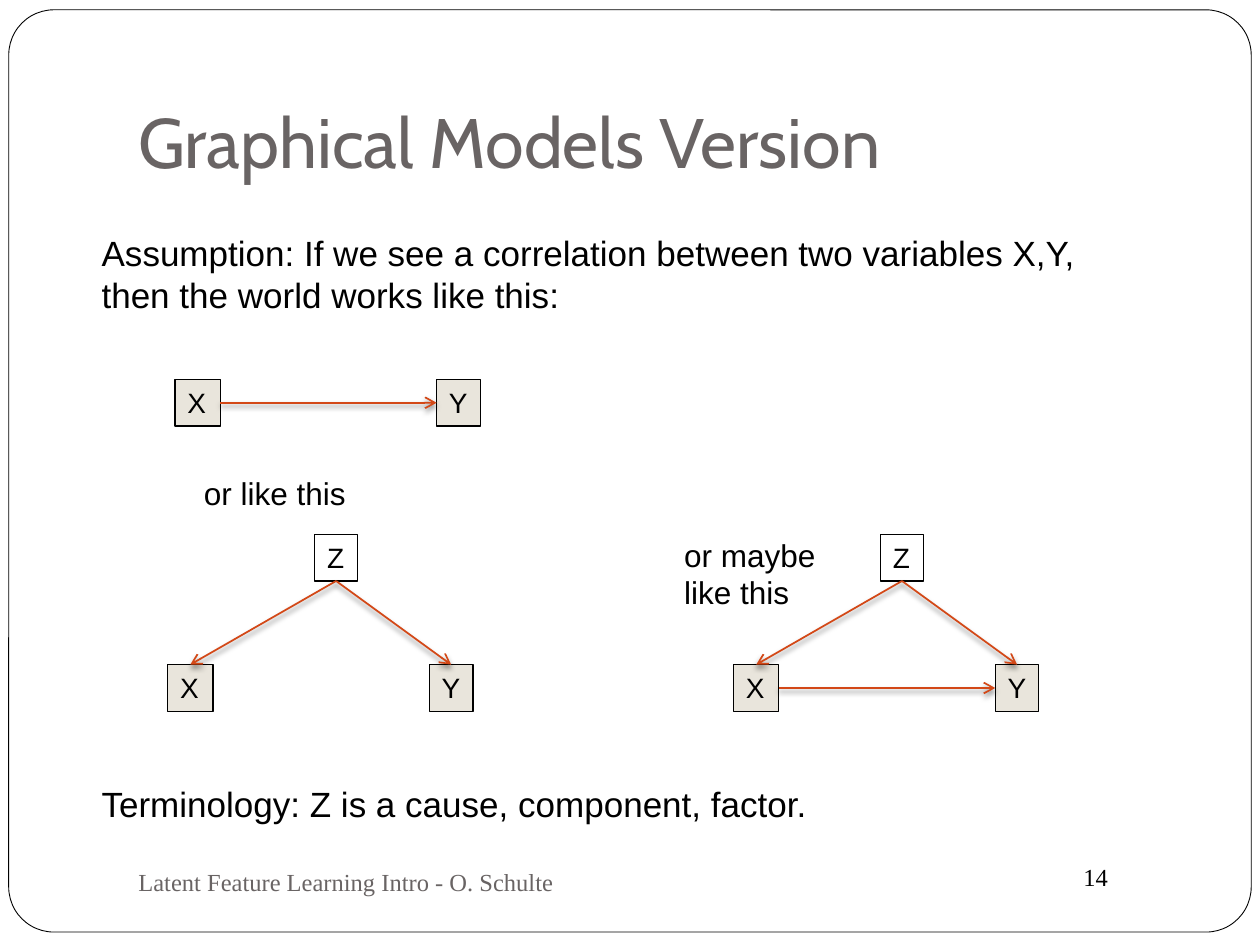
"""Build the slide 'Graphical Models Version' with its three small causal graphs."""
from lxml import etree
from pptx import Presentation
from pptx.dml.color import RGBColor
from pptx.enum.shapes import MSO_CONNECTOR, MSO_SHAPE
from pptx.enum.text import MSO_ANCHOR, MSO_AUTO_SIZE, PP_ALIGN
from pptx.oxml import parse_xml
from pptx.oxml.ns import nsdecls, qn
from pptx.util import Pt

RECTANGLE, ROUNDED = MSO_SHAPE.RECTANGLE, MSO_SHAPE.ROUNDED_RECTANGLE
STRAIGHT = MSO_CONNECTOR.STRAIGHT
TOP, MIDDLE, BOTTOM = MSO_ANCHOR.TOP, MSO_ANCHOR.MIDDLE, MSO_ANCHOR.BOTTOM
LEFT = PP_ALIGN.LEFT
FIT_SHAPE, NO_FIT = MSO_AUTO_SIZE.SHAPE_TO_FIT_TEXT, MSO_AUTO_SIZE.NONE
BLACK = RGBColor(0x00, 0x00, 0x00)
WHITE = RGBColor(0xFF, 0xFF, 0xFF)
GRAY = RGBColor(0x69, 0x64, 0x64)
BEIGE = RGBColor(0xE9, 0xE5, 0xDC)
ORANGE = RGBColor(0xD3, 0x48, 0x17)
SHADOW = (
    f'<a:effectLst {nsdecls("a")}><a:outerShdw blurRad="38100" dist="25400" dir="5400000" '
    'rotWithShape="0"><a:srgbClr val="000000"><a:alpha val="50000"/></a:srgbClr>'
    '</a:outerShdw></a:effectLst>'
)


def write_text(shape, text, size, font_name="Arial", color=BLACK, **frame_format):
    frame = shape.text_frame
    settings = {"word_wrap": True, "auto_size": NO_FIT, "vertical_anchor": TOP}
    for name, value in (settings | frame_format).items():
        setattr(frame, name, value)
    paragraph = frame.paragraphs[0]
    paragraph.alignment = LEFT
    run = paragraph.add_run()
    run.text = text
    for name, value in {"name": font_name, "size": Pt(size)}.items():
        setattr(run.font, name, value)
    run.font.color.rgb = color


def add_arrow(slide, start, end):
    connector = slide.shapes.add_connector(STRAIGHT, *map(Pt, start + end))
    connector.line.color.rgb = ORANGE
    connector.line.width = Pt(1)
    etree.SubElement(connector.line._get_or_add_ln(), qn("a:tailEnd"), type="arrow")
    connector._element.spPr.append(parse_xml(SHADOW))


presentation = Presentation()
presentation.slide_width, presentation.slide_height = Pt(720), Pt(540)
slide = presentation.slides.add_slide(presentation.slide_layouts[6])

border = slide.shapes.add_shape(ROUNDED, Pt(5), Pt(5.6), Pt(710), Pt(527))
border.adjustments[0] = 0.049
border.shadow.inherit = False
border.fill.solid()
border.fill.fore_color.rgb = WHITE
border.line.color.rgb = BLACK
border.line.width = Pt(0.5)

serif = {"font_name": "Times New Roman"}
title_format = {"font_name": "Cabin", "color": GRAY, "vertical_anchor": BOTTOM, "margin_bottom": Pt(7.2)}
footer_format = serif | {"color": GRAY, "vertical_anchor": MIDDLE}
texts = [
    ((72, 21.6, 612, 90), "Graphical Models Version", 40, title_format),
    ((51, 129, 584, 55.7), "Assumption: If we see a correlation between two variables X,Y, "
     "then the world works like this:", 20, {}),
    ((109.4, 267.3, 101.5, 29), "or like this", 18, {}),
    ((383.8, 302.5, 101.5, 51), "or maybe like this", 18, {}),
    ((51, 443.8, 584, 31.5), "Terminology: Z is a cause, component, factor.", 20, {}),
    ((72, 486, 312, 36), "Latent Feature Learning Intro - O. Schulte", 14, footer_format),
    ((612, 488.9, 72, 24.2), "14", 14, serif),
]
for box, text, size, text_format in texts:
    text_box = slide.shapes.add_textbox(*map(Pt, box))
    write_text(text_box, text, size, **text_format)

NODE_HEIGHT = 26.7
NODES = {
    "X": {"offset": (0, 0), "width": 25.9},
    "Y": {"offset": (149.5, 0), "width": 25},
    "Z": {"offset": (84, -74.5), "width": 24.5},
}
graphs = [
    ((100, 216.8), "XY", ["XY"]),
    ((95.8, 379.8), "ZXY", ["ZX", "ZY"]),
    ((419.2, 379.8), "ZXY", ["ZX", "ZY", "XY"]),
]
for (left, top), letters, edges in graphs:
    corners = {}
    for letter in letters:
        across, down = NODES[letter]["offset"]
        width = NODES[letter]["width"]
        x, y = corners[letter] = (left + across, top + down)
        node = slide.shapes.add_shape(RECTANGLE, Pt(x), Pt(y), Pt(width), Pt(NODE_HEIGHT))
        node.shadow.inherit = False
        if letter == "Z":
            node.fill.background()
        else:
            node.fill.solid()
            node.fill.fore_color.rgb = BEIGE
        node.line.color.rgb = BLACK
        node.line.width = Pt(0.75)
        write_text(node, letter, 16, word_wrap=False, auto_size=FIT_SHAPE)
    for source, target in edges:
        source_x, source_y = corners[source]
        target_x, target_y = corners[target]
        source_width, target_width = NODES[source]["width"], NODES[target]["width"]
        if source == "Z":
            start = (source_x + source_width / 2, source_y + NODE_HEIGHT)
            end = (target_x + target_width / 2, target_y)
        else:
            start = (source_x + source_width, source_y + NODE_HEIGHT / 2)
            end = (target_x, target_y + NODE_HEIGHT / 2)
        add_arrow(slide, start, end)

presentation.save("out.pptx")
